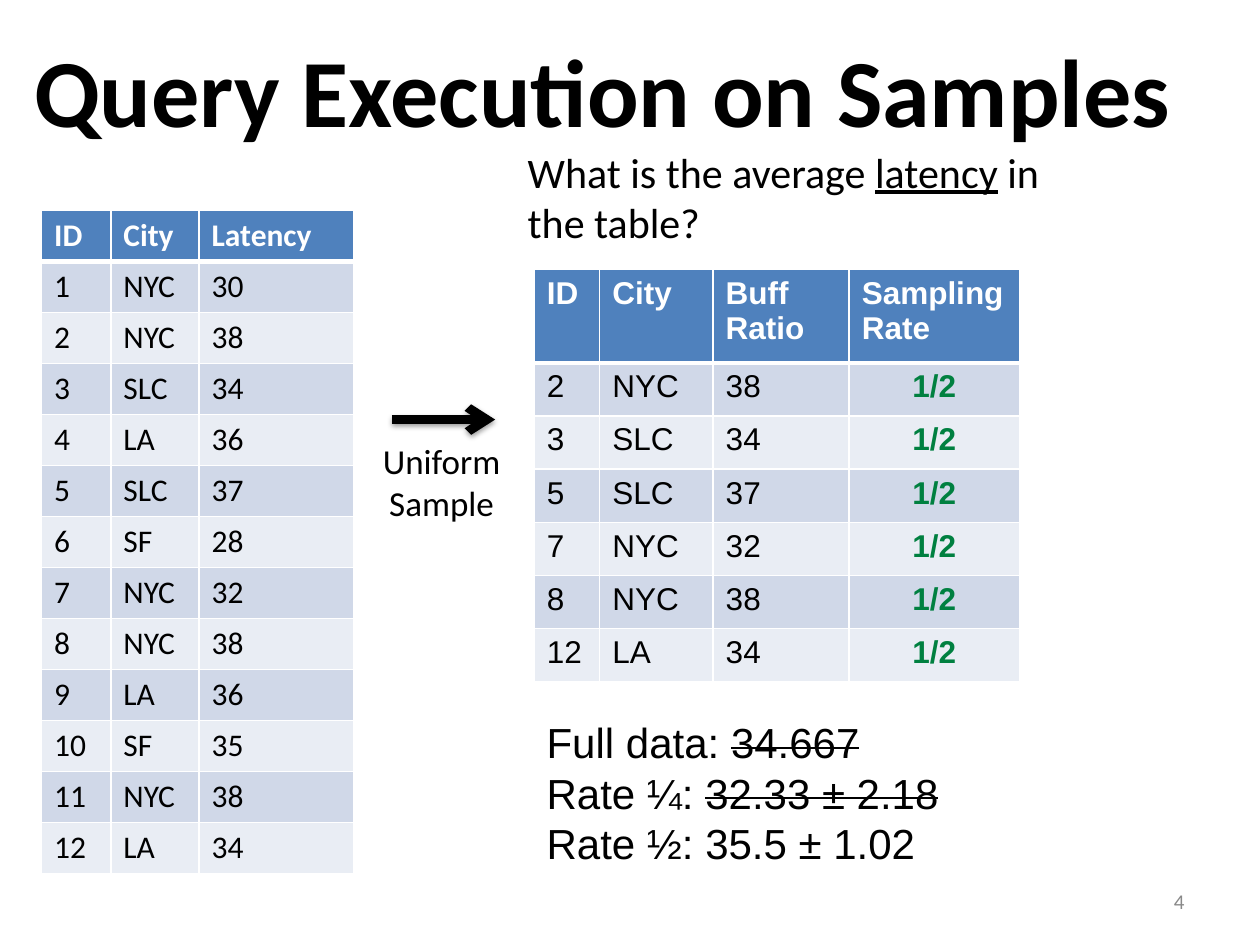
import dataclasses

import lxml.etree
import pptx
import pptx.dml.color
import pptx.enum.shapes
import pptx.enum.text
import pptx.oxml.ns
import pptx.util

ALIGN = pptx.enum.text.PP_ALIGN
ANCHOR = pptx.enum.text.MSO_ANCHOR


@dataclasses.dataclass(frozen=True)
class Theme:
    black: str = "000000"
    white: str = "FFFFFF"
    header: str = "4F81BD"
    bands: tuple = ("D0D8E8", "E9EDF4")
    rate: str = "008040"
    muted: str = "898989"
    heading_font: str = "Calibri"
    sample_font: str = "Arial"
    title: int = 55
    body: int = 24
    label: int = 20
    cell: int = 18
    number: int = 12


def add_element(parent, tag, index=None, **attributes):
    element = lxml.etree.Element(pptx.oxml.ns.qn(tag), attributes)
    parent.insert(len(parent) if index is None else index, element)
    return element


def add_color(parent, color):
    return add_element(parent, "a:srgbClr", val=color)


class SlideBuilder:
    """Places elements on a grid of 100 columns by 75 rows."""

    def __init__(self, presentation, theme):
        self.theme = theme
        self.column = presentation.slide_width / 100
        self.row = presentation.slide_height / 75
        self.slide = presentation.slides.add_slide(presentation.slide_layouts[5])

    def box(self, left, top, width, height):
        return (round(left * self.column), round(top * self.row),
                round(width * self.column), round(height * self.row))

    def style(self, paragraph, size, font, color=None, bold=False, align=ALIGN.LEFT):
        paragraph.alignment = align
        paragraph.font.size = pptx.util.Pt(size)
        paragraph.font.name = font
        paragraph.font.bold = bold
        paragraph.font.color.rgb = pptx.dml.color.RGBColor.from_string(color or self.theme.black)

    def title(self, text, *place):
        shape = self.slide.shapes.title
        shape.left, shape.top, shape.width, shape.height = self.box(*place)
        shape.text_frame.text = text
        shape.text_frame.vertical_anchor = ANCHOR.MIDDLE
        self.style(shape.text_frame.paragraphs[0], self.theme.title,
                   self.theme.heading_font, bold=True)

    def text(self, lines, *place, size, font, color=None, align=ALIGN.LEFT,
             anchor=ANCHOR.TOP, wrap=True):
        """Each line is a list of (text, mark); a mark is None, "underline" or "strike"."""
        frame = self.slide.shapes.add_textbox(*self.box(*place)).text_frame
        frame.word_wrap = wrap
        frame.vertical_anchor = anchor
        for index, line in enumerate(lines):
            paragraph = frame.add_paragraph() if index else frame.paragraphs[0]
            self.style(paragraph, size, font, color, align=align)
            for words, mark in line:
                run = paragraph.add_run()
                run.text = words
                if mark == "underline":
                    run.font.underline = True
                elif mark == "strike":
                    run._r.get_or_add_rPr().set("strike", "sngStrike")

    def borders(self, cell, top, bottom):
        properties = cell._tc.get_or_add_tcPr()
        sides = {"a:lnL": 1, "a:lnR": 1, "a:lnT": top, "a:lnB": bottom}
        for index, (tag, points) in enumerate(sides.items()):
            line = add_element(properties, tag, index, w=str(pptx.util.Pt(points)))
            add_color(add_element(line, "a:solidFill"), self.theme.white)

    def table(self, header, records, left, top, widths, header_height, row_height,
              font, rate_column=None):
        rows = [header, *records]
        height = header_height + row_height * len(records)
        place = self.box(left, top, sum(widths), height)
        table = self.slide.shapes.add_table(len(rows), len(header), *place).table
        for column, width in zip(table.columns, widths):
            column.width = round(width * self.column)
        for row_index, values in enumerate(rows):
            is_header = row_index == 0
            table.rows[row_index].height = round(
                (header_height if is_header else row_height) * self.row)
            fill = self.theme.header if is_header else self.theme.bands[(row_index - 1) % 2]
            for column_index, value in enumerate(values):
                cell = table.cell(row_index, column_index)
                cell.text = str(value)
                cell.fill.solid()
                cell.fill.fore_color.rgb = pptx.dml.color.RGBColor.from_string(fill)
                self.borders(cell, top=3 if row_index == 1 else 1, bottom=3 if is_header else 1)
                is_rate = column_index == rate_column and not is_header
                color = (self.theme.white if is_header
                         else self.theme.rate if is_rate else self.theme.black)
                self.style(cell.text_frame.paragraphs[0], self.theme.cell, font, color,
                           bold=is_header or is_rate,
                           align=ALIGN.CENTER if is_rate else ALIGN.LEFT)

    def arrow(self, left, top, length):
        start_x, start_y, width, _ = self.box(left, top, length, 0)
        connector = self.slide.shapes.add_connector(
            pptx.enum.shapes.MSO_CONNECTOR.STRAIGHT, start_x, start_y, start_x + width, start_y)
        connector.line.width = pptx.util.Pt(5)
        connector.line.color.rgb = pptx.dml.color.RGBColor.from_string(self.theme.black)
        add_element(connector.line._get_or_add_ln(), "a:tailEnd", type="arrow")
        effects = add_element(connector._element.spPr, "a:effectLst")
        shadow = add_element(effects, "a:outerShdw", blurRad=str(pptx.util.Pt(3.1)),
                             dist=str(pptx.util.Pt(1.6)), dir="5400000", rotWithShape="0")
        add_element(add_color(shadow, self.theme.black), "a:alpha", val="38000")


def main():
    presentation = pptx.Presentation()
    presentation.slide_width = pptx.util.Inches(10)
    presentation.slide_height = pptx.util.Inches(7.5)
    theme = Theme()
    builder = SlideBuilder(presentation, theme)

    cities = "NYC NYC SLC LA SLC SF NYC NYC LA SF NYC LA".split()
    latencies = [30, 38, 34, 36, 37, 28, 32, 38, 36, 35, 38, 34]
    full_data = list(zip(range(1, 13), cities, latencies))
    sampled_ids = (2, 3, 5, 7, 8, 12)
    sample = [(*record, "1/2") for record in full_data if record[0] in sampled_ids]

    builder.title("Query Execution on Samples", 1.7, 0.8, 93.3, 12.5)
    builder.text([[("What is the average ", None), ("latency", "underline"),
                   (" in the table?", None)]],
                 40.9, 11.1, 47.7, 9.1, size=theme.body, font=theme.heading_font)
    builder.table(["ID", "City", "Buff Ratio", "Sampling Rate"], sample, 42.4, 21.4,
                  [5.2, 9, 10.8, 13.5], header_height=7.4, row_height=4.22,
                  font=theme.sample_font, rate_column=3)
    builder.table(["ID", "City", "Latency"], full_data, 3.3, 16.7, [5.5, 7, 12.3],
                  header_height=4.05, row_height=4.05, font=theme.heading_font)
    builder.text([[("Full data: ", None), ("34.667", "strike")],
                  [("Rate ¼: ", None), ("32.33 ± 2.18", "strike")],
                  [("Rate ½: 35.5 ± 1.02", None)]],
                 42.4, 56.4, 46.3, 13.1, size=theme.body, font=theme.sample_font)
    builder.arrow(31.1, 33.3, 8.2)
    builder.text([[("Uniform", None)], [("Sample", None)]], 29.3, 34.4, 11.5, 7.7,
                 size=theme.label, font=theme.heading_font, align=ALIGN.CENTER, wrap=False)
    builder.text([[("4", None)]], 71.7, 69.5, 23.3, 4, size=theme.number,
                 font=theme.heading_font, color=theme.muted, align=ALIGN.RIGHT,
                 anchor=ANCHOR.MIDDLE)
    presentation.save("out.pptx")


if __name__ == "__main__":
    main()
